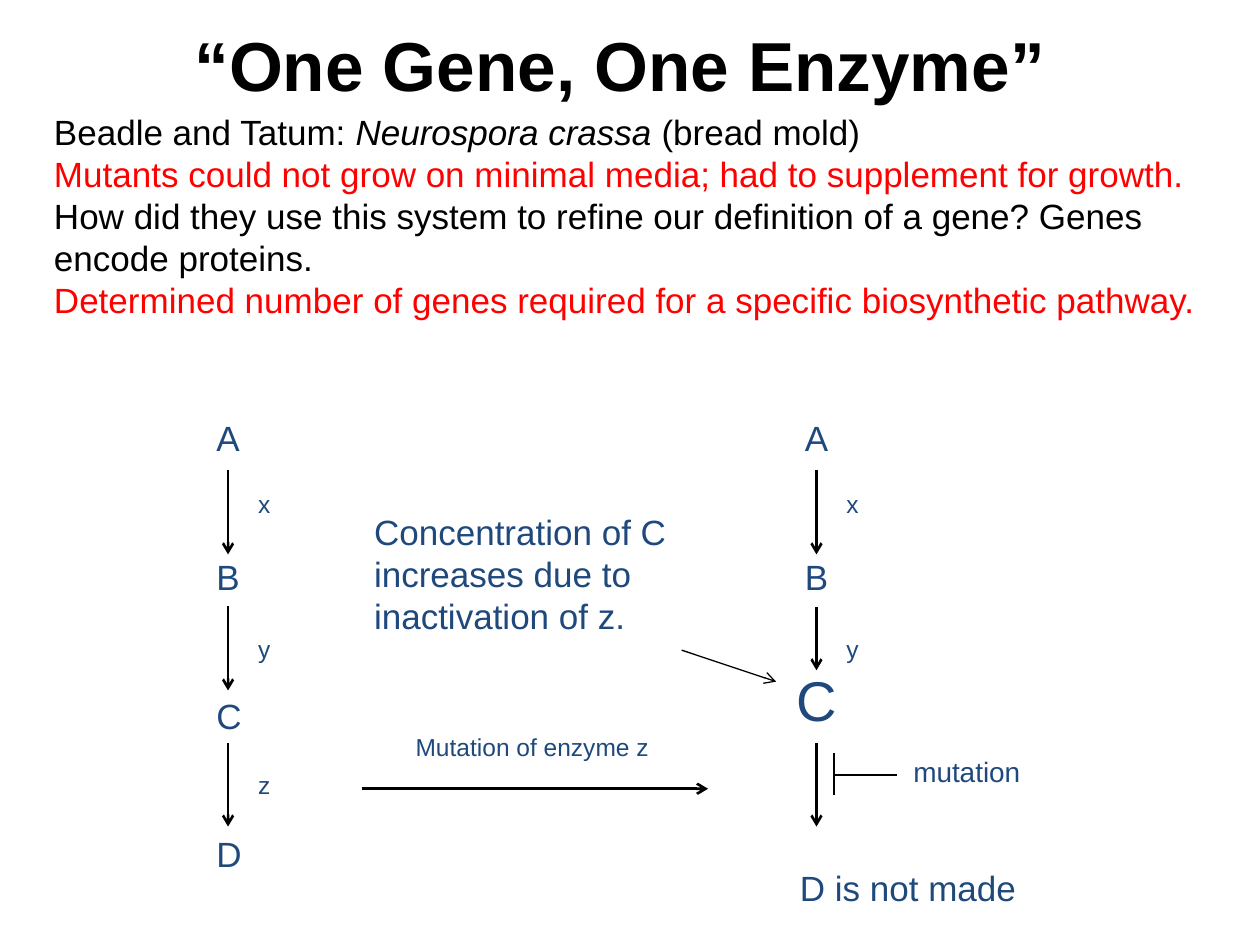
from lxml.etree import SubElement
from pptx import Presentation
from pptx.dml.color import RGBColor
from pptx.enum.shapes import MSO_CONNECTOR as Connector
from pptx.enum.text import MSO_ANCHOR as Anchor, PP_ALIGN as Align
from pptx.oxml.ns import qn
from pptx.util import Inches, Pt

BLACK = RGBColor(0x00, 0x00, 0x00)
RED = RGBColor(0xFF, 0x00, 0x00)
NAVY = RGBColor(0x1F, 0x49, 0x7D)
FONT = "Arial"
BODY_SIZE = 20
ENZYME_SIZE = 14
LINE_HEIGHT = 1.2

INTRO = [
    (BLACK, [("Beadle and Tatum: ", False), ("Neurospora crassa", True),
             (" (bread mold)", False)]),
    (RED, [("Mutants could not grow on minimal media; had to supplement for growth.", False)]),
    (BLACK, [("How did they use this system to refine our definition of a gene? "
              "Genes encode proteins.", False)]),
    (RED, [("Determined number of genes required for a specific biosynthetic pathway.", False)]),
]


def add_box(slide, left, top, width, height, wrap=True):
    box = slide.shapes.add_textbox(Inches(left), Inches(top), Inches(width), Inches(height))
    box.text_frame.word_wrap = wrap
    return box.text_frame


def add_span(para, text, size, color, bold=False, italic=False):
    para.line_spacing = Pt(size * LINE_HEIGHT)
    span = para.add_run()
    span.text = text
    font = span.font
    font.name, font.size, font.color.rgb = FONT, Pt(size), color
    font.bold, font.italic = bold, italic


def add_label(slide, text, left, top, width, height, size=BODY_SIZE, wrap=True):
    frame = add_box(slide, left, top, width, height, wrap)
    add_span(frame.paragraphs[0], text, size, NAVY)


def add_line(slide, start, end, weight=1.5, arrow=True):
    line = slide.shapes.add_connector(
        Connector.STRAIGHT, *(Inches(value) for value in (*start, *end)))
    line.line.color.rgb = BLACK
    line.line.width = Pt(weight)
    if arrow:
        SubElement(line.line._get_or_add_ln(), qn("a:tailEnd"), type="arrow")
    SubElement(line._element.spPr, qn("a:effectLst"))


def add_title(slide):
    frame = add_box(slide, 0.67, 0.44, 8.5, 0.75)
    frame.vertical_anchor = Anchor.MIDDLE
    frame.margin_bottom = Inches(0.66)
    para = frame.paragraphs[0]
    para.alignment = Align.CENTER
    add_span(para, "“One Gene, One Enzyme”", 39.6, BLACK, bold=True)


def add_intro(slide):
    frame = add_box(slide, 0.33, 0.83, 9.29, 1.78)
    for index, (color, spans) in enumerate(INTRO):
        para = frame.add_paragraph() if index else frame.paragraphs[0]
        for text, italic in spans:
            add_span(para, text, BODY_SIZE, color, italic=italic)


def add_pathway(slide, left, compounds, enzymes, arrows):
    for index, compound in enumerate(compounds):
        add_label(slide, compound, left, 3.26 + 1.1 * index, 0.5, 0.44)
    for enzyme, top in zip(enzymes, (3.83, 4.98, 6.06)):
        add_label(slide, enzyme, left + 0.33, top, 0.5, 0.34, ENZYME_SIZE)
    for start, end in arrows:
        add_line(slide, (left + 0.19, start), (left + 0.19, end))


def add_mutation(slide):
    add_label(slide, "C", 6.22, 5.23, 0.5, 1.18, 32)
    add_line(slide, (6.62, 6.15), (7.12, 6.15), arrow=False)
    add_line(slide, (6.62, 5.98), (6.62, 6.31), arrow=False)
    add_label(slide, "mutation", 7.15, 5.94, 1.06, 0.37, 16, wrap=False)
    add_line(slide, (2.87, 6.26), (5.62, 6.26))
    add_label(slide, "Mutation of enzyme z", 3.2, 5.76, 2.07, 0.34, ENZYME_SIZE, wrap=False)
    add_label(slide, "Concentration of C increases due to inactivation of z.",
              2.87, 4, 2.75, 1.11)
    add_line(slide, (5.41, 5.16), (6.16, 5.41), weight=0.75)
    add_label(slide, "D is not made", 6.25, 6.83, 2, 0.44)


def main():
    deck = Presentation()
    deck.slide_width, deck.slide_height = Inches(10), Inches(7.5)
    page = deck.slides.add_slide(deck.slide_layouts[6])
    add_title(page)
    add_intro(page)
    add_pathway(page, 1.62, "ABCD", "xyz", [(3.73, 4.4), (4.81, 5.48), (5.9, 6.56)])
    add_pathway(page, 6.29, "AB", "xy", [(3.73, 4.4), (4.82, 5.32), (5.9, 6.56)])
    add_mutation(page)
    deck.save("out.pptx")


if __name__ == "__main__":
    main()
